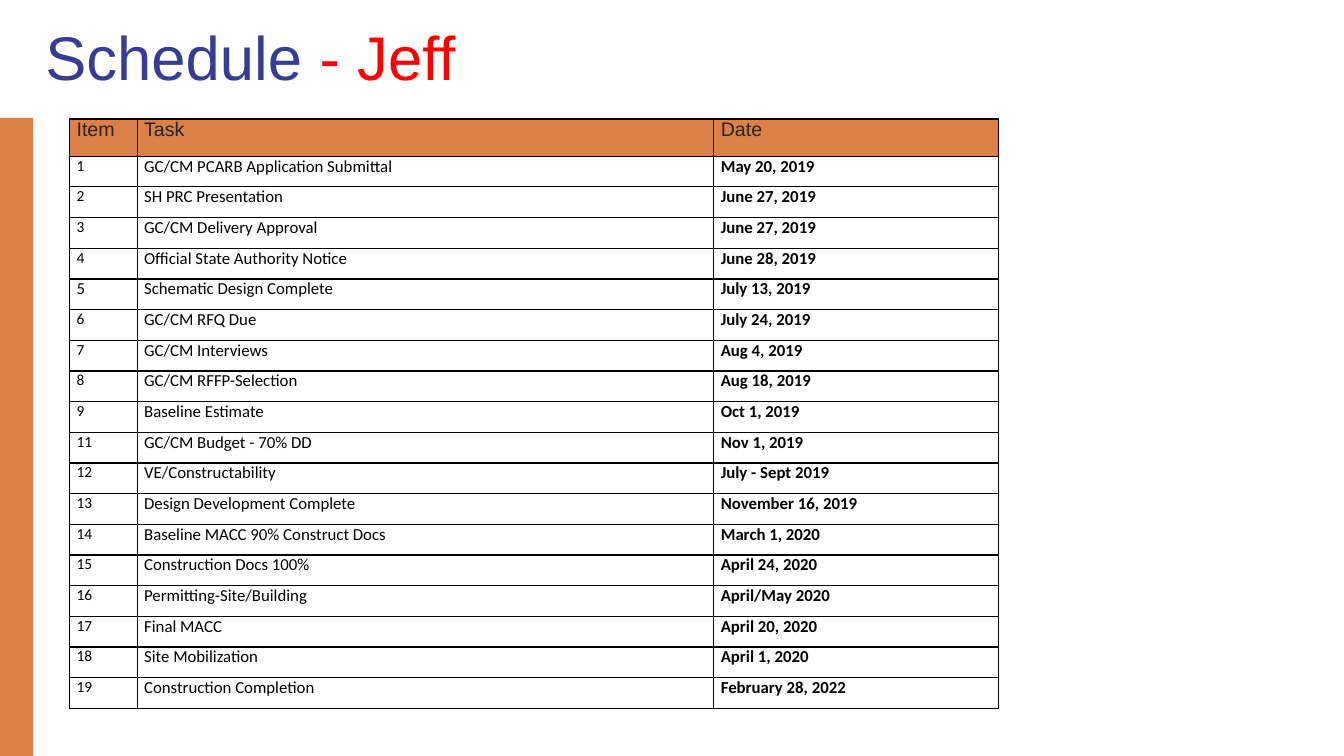
import pptx
import pptx.util
import pptx.dml.color
import pptx.enum.shapes
import pptx.enum.text
import pptx.oxml.ns
import lxml.etree

Inches = pptx.util.Inches
RGBColor = pptx.dml.color.RGBColor
PP_ALIGN = pptx.enum.text.PP_ALIGN
MSO_ANCHOR = pptx.enum.text.MSO_ANCHOR

ORANGE = RGBColor(0xDD, 0x80, 0x47)
NAVY = RGBColor(0x35, 0x3D, 0x94)
RED = RGBColor(0xFF, 0x00, 0x00)
CHARCOAL = RGBColor(0x26, 0x26, 0x26)
BLACK = RGBColor(0x00, 0x00, 0x00)

HEADERS = ("Item", "Task", "Date")
TASKS = (
    ("1", "GC/CM PCARB Application Submittal", "May 20, 2019"),
    ("2", "SH PRC Presentation", "June 27, 2019"),
    ("3", "GC/CM Delivery Approval", "June 27, 2019"),
    ("4", "Official State Authority Notice", "June 28, 2019"),
    ("5", "Schematic Design Complete", "July 13, 2019"),
    ("6", "GC/CM RFQ Due", "July 24, 2019"),
    ("7", "GC/CM Interviews", "Aug 4, 2019"),
    ("8", "GC/CM RFFP-Selection", "Aug 18, 2019"),
    ("9", "Baseline Estimate", "Oct 1, 2019"),
    ("11", "GC/CM Budget - 70% DD", "Nov 1, 2019"),
    ("12", "VE/Constructability", "July - Sept 2019"),
    ("13", "Design Development Complete", "November 16, 2019"),
    ("14", "Baseline MACC 90% Construct Docs", "March 1, 2020"),
    ("15", "Construction Docs 100%", "April 24, 2020"),
    ("16", "Permitting-Site/Building", "April/May 2020"),
    ("17", "Final MACC", "April 20, 2020"),
    ("18", "Site Mobilization", "April 1, 2020"),
    ("19", "Construction Completion", "February 28, 2022"),
)
COLUMN_WIDTHS = (0.67, 5.72, 2.82)
HEADER_HEIGHT = 0.37


def add_text(p, text, size=12, font="Calibri", color=BLACK, bold=False, align=PP_ALIGN.JUSTIFY):
    p.alignment = align
    r = p.add_run()
    r.text = text
    r.font.size = pptx.util.Pt(size)
    r.font.name = font
    r.font.color.rgb = color
    r.font.bold = bold


def add_borders(cell):
    tc_pr = cell._tc.get_or_add_tcPr()
    qn = pptx.oxml.ns.qn
    for i, side in enumerate(("a:lnL", "a:lnR", "a:lnT", "a:lnB")):
        ln = lxml.etree.Element(qn(side), w=str(pptx.util.Pt(1)))
        fill = lxml.etree.SubElement(ln, qn("a:solidFill"))
        lxml.etree.SubElement(fill, qn("a:srgbClr"), val=str(BLACK))
        tc_pr.insert(i, ln)


def add_side_bar(s, left, top, width, height):
    sp = s.shapes.add_shape(pptx.enum.shapes.MSO_SHAPE.RECTANGLE,
                            Inches(left), Inches(top), Inches(width), Inches(height))
    sp.shadow.inherit = False
    sp.fill.solid()
    sp.fill.fore_color.rgb = ORANGE
    sp.line.fill.background()


def add_title(s, left, top, width, height):
    sp = s.shapes.title
    sp.left, sp.top, sp.width, sp.height = map(Inches, (left, top, width, height))
    tf = sp.text_frame
    tf.auto_size = pptx.enum.text.MSO_AUTO_SIZE.NONE
    tf.vertical_anchor = MSO_ANCHOR.MIDDLE
    p = tf.paragraphs[0]
    p.line_spacing = 0.9
    for text, color in (("Schedule ", NAVY), ("- Jeff", RED)):
        add_text(p, text, size=44, font="Arial", color=color, align=PP_ALIGN.LEFT)


def fill_cell(cell, text, fill=None, **text_format):
    cell.margin_left = cell.margin_right = Inches(0.07)
    cell.margin_top = cell.margin_bottom = 0
    cell.vertical_anchor = MSO_ANCHOR.TOP
    if fill is None:
        cell.fill.background()
    else:
        cell.fill.solid()
        cell.fill.fore_color.rgb = fill
    add_borders(cell)
    add_text(cell.text_frame.paragraphs[0], text, **text_format)


def add_schedule(s, left, top, width, height):
    table = s.shapes.add_table(len(TASKS) + 1, len(HEADERS), Inches(left), Inches(top),
                               Inches(width), Inches(height)).table
    for column, column_width in zip(table.columns, COLUMN_WIDTHS):
        column.width = Inches(column_width)
    for row in table.rows:
        row.height = Inches((height - HEADER_HEIGHT) / len(TASKS))
    table.rows[0].height = Inches(HEADER_HEIGHT)

    for j, header in enumerate(HEADERS):
        fill_cell(table.cell(0, j), header, fill=ORANGE, size=14, font="Arial",
                  color=CHARCOAL, align=PP_ALIGN.LEFT)
    for i, (item, task, date) in enumerate(TASKS, start=1):
        fill_cell(table.cell(i, 0), item, size=12 if item == "5" else 11)
        fill_cell(table.cell(i, 1), task)
        fill_cell(table.cell(i, 2), date, bold=True)


def main():
    prs = pptx.Presentation()
    prs.slide_width, prs.slide_height = Inches(13.33), Inches(7.5)
    s = prs.slides.add_slide(prs.slide_layouts[5])
    add_side_bar(s, 0, 1.17, 0.33, 6.33)
    add_title(s, 0.35, 0.34, 12.62, 0.53)
    add_schedule(s, 0.69, 1.18, 9.21, 5.85)
    prs.save("out.pptx")


if __name__ == "__main__":
    main()
